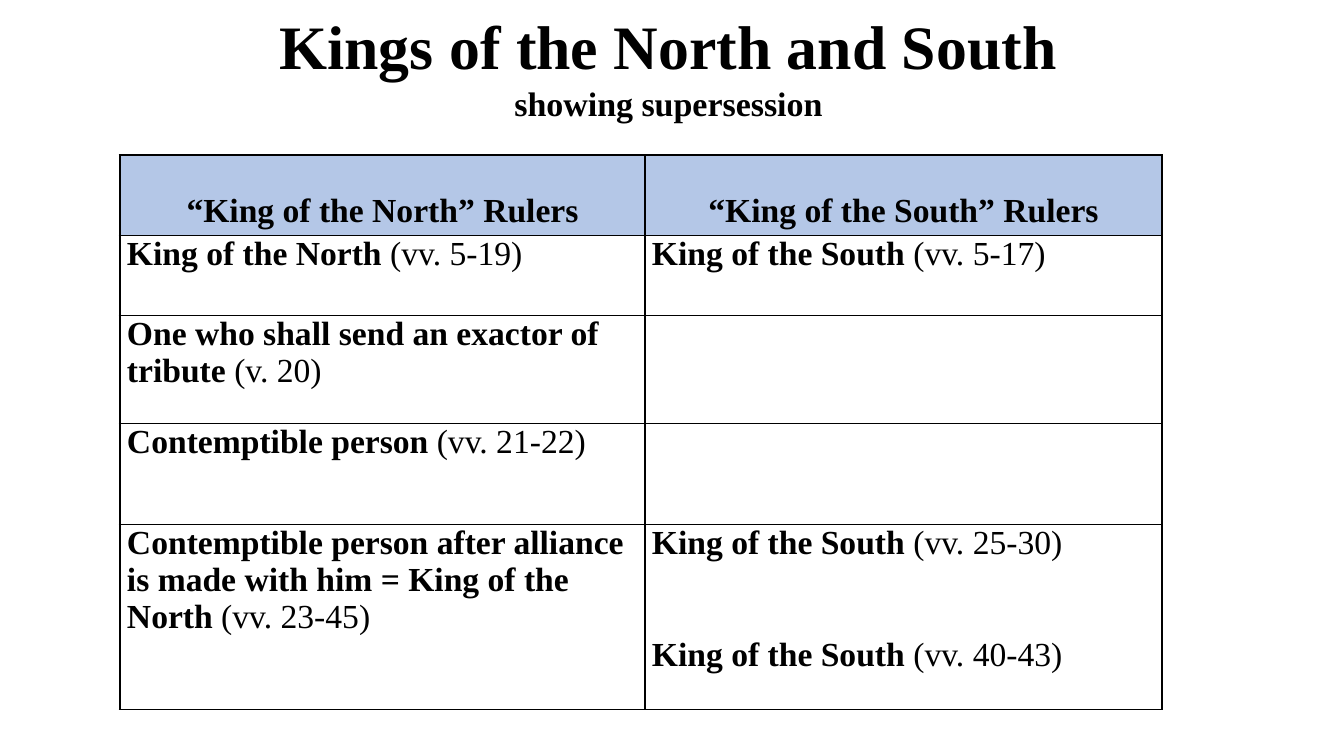
from lxml.etree import SubElement
from pptx import Presentation
from pptx.dml.color import RGBColor
from pptx.enum.text import MSO_ANCHOR, PP_ALIGN
from pptx.oxml.ns import qn
from pptx.util import Emu, Pt

SCALE = 914400 / 100.8  # EMU in one px


def px(n):
    return Emu(round(n * SCALE))


def rgb(value):
    return RGBColor.from_string(value)


def add_run(p, text, font="Times New Roman", size=24, color="000000", bold=True):
    r = p.add_run()
    r.text = text
    r.font.name = font
    r.font.size = Pt(size)
    r.font.bold = bold
    r.font.color.rgb = rgb(color)


class SlideBuilder:
    line_color = "000000"
    header_fill = "B4C7E7"

    def __init__(self, prs):
        self.slide = prs.slides.add_slide(prs.slide_layouts[6])

    def title(self, x, y, w, h, lines):
        tf = self.slide.shapes.add_textbox(px(x), px(y), px(w), px(h)).text_frame
        tf.word_wrap = True
        tf.vertical_anchor = MSO_ANCHOR.MIDDLE
        for i, (text, size) in enumerate(lines):
            p = tf.paragraphs[0] if i == 0 else tf.add_paragraph()
            p.alignment = PP_ALIGN.CENTER
            add_run(p, text, size=size)

    def border(self, cell, left_width):
        tcPr = cell._tc.get_or_add_tcPr()
        for side, width in (("L", left_width), ("R", 1), ("T", 1), ("B", 1)):
            ln = SubElement(tcPr, qn(f"a:ln{side}"), w=str(Pt(width)))
            fill = SubElement(ln, qn("a:solidFill"))
            SubElement(fill, qn("a:srgbClr"), val=self.line_color)

    def cell(self, cell, entries, header, left_width):
        cell.margin_left = cell.margin_right = px(7)
        cell.margin_top = cell.margin_bottom = 0
        self.border(cell, left_width)
        if header:
            cell.fill.solid()
            cell.fill.fore_color.rgb = rgb(self.header_fill)
        else:
            cell.fill.background()
        tf = cell.text_frame
        for i, (name, verses) in enumerate(entries):
            p = tf.paragraphs[0] if i == 0 else tf.add_paragraph()
            if i:
                p.space_before = Pt(53.5)
            if header:
                p.alignment = PP_ALIGN.CENTER
                p.line_spacing = 2.0
            add_run(p, name)
            if verses:
                add_run(p, f" ({verses})", bold=False)

    def table(self, x, y, widths, heights, rows):
        table = self.slide.shapes.add_table(
            len(heights), len(widths), px(x), px(y), px(sum(widths)), px(sum(heights))
        ).table
        table.first_row = table.horz_banding = False
        for column, width in zip(table.columns, widths):
            column.width = px(width)
        for i, (height, row) in enumerate(zip(heights, rows)):
            table.rows[i].height = px(height)
            for j, entries in enumerate(row):
                self.cell(table.cell(i, j), entries, i == 0, 1 if j else 2.25)


# Each cell lists its entries as (ruler, verses)
RULERS = [
    ([("“King of the North” Rulers", "")], [("“King of the South” Rulers", "")]),
    ([("King of the North", "vv. 5-19")], [("King of the South", "vv. 5-17")]),
    ([("One who shall send an exactor of tribute", "v. 20")], []),
    ([("Contemptible person", "vv. 21-22")], []),
    (
        [("Contemptible person after alliance is made with him = King of the North",
          "vv. 23-45")],
        [("King of the South", "vv. 25-30"), ("King of the South", "vv. 40-43")],
    ),
]


def main():
    prs = Presentation()
    prs.slide_width, prs.slide_height = px(1344), px(756)
    s = SlideBuilder(prs)

    # Title and subtitle
    s.title(89, 15, 1159, 101,
            [("Kings of the North and South", 44.1), ("showing supersession", 24.3)])

    # Table of rulers
    s.table(120, 155, [525, 517], [75, 80, 108, 101, 185], RULERS)

    prs.save("out.pptx")


if __name__ == "__main__":
    main()
